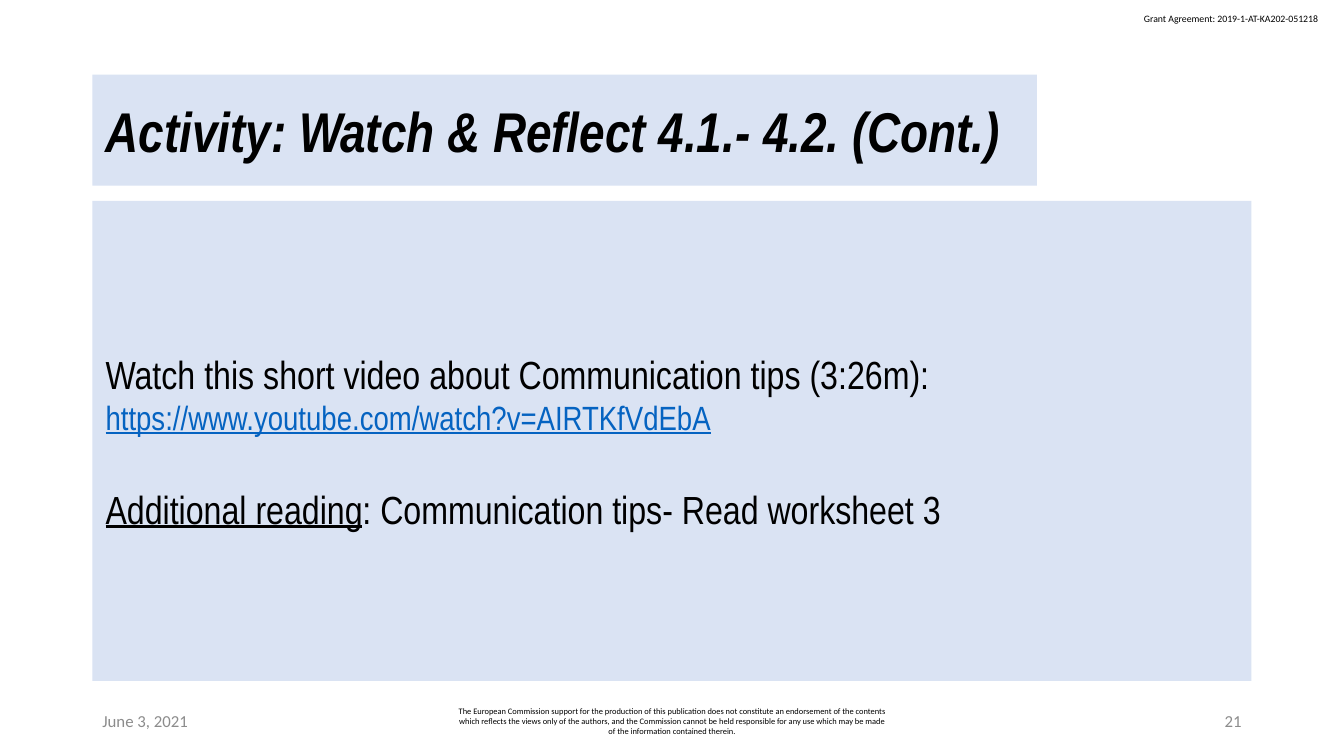
from dataclasses import dataclass, field

from pptx import Presentation
from pptx import util as u
from pptx.dml.color import RGBColor
from pptx.enum import shapes, text

BLACK, GREY, LINK_BLUE, PANEL_BLUE = "000000", "8C8C8C", "0563C1", "DAE3F3"
LEFT = 2.33
FOOTER_TOP, FOOTER_HEIGHT = 17.66, 1.01
ALIGN = text.PP_ALIGN


@dataclass
class Run:
    wording: str
    format: dict
    color: str = BLACK


@dataclass
class Line:
    runs: list[Run]
    layout: dict = field(default_factory=dict)


@dataclass
class Label:
    box: tuple[float, float, float, float]  # left, top, width, height in cm
    line: Line
    frame: dict


def rgb(value: str) -> RGBColor:
    return RGBColor.from_string(value)


def apply(target: object, values: dict) -> None:
    for name, value in values.items():
        setattr(target, name, value)


def cm(box: tuple) -> list:
    return [u.Cm(length) for length in box]


def write(frame: object, lines: list[Line], settings: dict) -> None:
    apply(frame, settings)
    for index, line in enumerate(lines):
        paragraph = frame.add_paragraph() if index else frame.paragraphs[0]
        apply(paragraph, {"alignment": ALIGN.LEFT} | line.layout)
        for part in line.runs:
            run = paragraph.add_run()
            run.text = part.wording
            apply(run.font, part.format)
            run.font.color.rgb = rgb(part.color)


def fill_panel(panel: object, lines: list[Line]) -> None:
    panel.fill.solid()
    panel.fill.fore_color.rgb = rgb(PANEL_BLUE)
    panel.line.fill.background()
    write(panel.text_frame, lines, PANEL_FRAME)


def add_label(slide: object, label: Label) -> None:
    box = slide.shapes.add_textbox(*cm(label.box))
    write(box.text_frame, [label.line], label.frame)


def font(name: str, size: float, **extra: bool) -> dict:
    return {"name": name, "size": u.Pt(size)} | extra


MIDDLE = {
    "word_wrap": True,
    "auto_size": text.MSO_AUTO_SIZE.NONE,
    "vertical_anchor": text.MSO_ANCHOR.MIDDLE,
}
PANEL_FRAME = MIDDLE | {
    "margin_left": u.Cm(0.33), "margin_right": u.Cm(0.33),
    "margin_top": u.Cm(0.18), "margin_bottom": u.Cm(0.18),
}
GRANT_FRAME = {"word_wrap": False, "auto_size": text.MSO_AUTO_SIZE.SHAPE_TO_FIT_TEXT}

FOOTER_FONT = font("Calibri", 12)
BODY_FONT = font("Arial Narrow", 28)

TITLE = Line([Run("Activity: Watch & Reflect 4.1.- 4.2. (Cont.)",
                  font("Arial Narrow", 40, bold=True, italic=True))])

TASKS = [
    Line([Run("Watch this short video about Communication tips (3:26m):", BODY_FONT)]),
    Line([Run("https://www.youtube.com/watch?v=AIRTKfVdEbA",
              font("Arial Narrow", 24, underline=True), LINK_BLUE)]),
    Line([Run("Additional reading", BODY_FONT | {"underline": True}),
          Run(": Communication tips- Read worksheet 3", BODY_FONT)],
         {"space_before": u.Pt(34)}),
]

DISCLAIMER = (
    "The European Commission support for the production of this publication does not "
    "constitute an endorsement of the contents which reflects the views only of the "
    "authors, and the Commission cannot be held responsible for any use which may be "
    "made of the information contained therein."
)

LABELS = [
    Label((28.58, 0.2, 5, 0.55),
          Line([Run("Grant Agreement: 2019-1-AT-KA202-051218", font("Calibri", 7))]),
          GRANT_FRAME),
    Label((LEFT, FOOTER_TOP, 7.62, FOOTER_HEIGHT),
          Line([Run("June 3, 2021", FOOTER_FONT, GREY)]), MIDDLE),
    Label((11.22, FOOTER_TOP, 11.43, FOOTER_HEIGHT),
          Line([Run(DISCLAIMER, font("Calibri", 6))], {"alignment": ALIGN.CENTER}), MIDDLE),
    Label((23.92, FOOTER_TOP, 7.62, FOOTER_HEIGHT),
          Line([Run("21", FOOTER_FONT, GREY)], {"alignment": ALIGN.RIGHT}), MIDDLE),
]


def main() -> None:
    deck = Presentation()
    deck.slide_width, deck.slide_height = u.Cm(33.87), u.Cm(19.05)
    slide = deck.slides.add_slide(deck.slide_layouts[5])

    # Grant number and footer
    for label in LABELS:
        add_label(slide, label)

    # Title
    title = slide.shapes.title
    title.left, title.top, title.width, title.height = cm((LEFT, 1.88, 23.8, 2.8))
    fill_panel(title, [TITLE])

    # Activity panel
    activity = slide.shapes.add_shape(shapes.MSO_SHAPE.RECTANGLE,
                                      *cm((LEFT, 5.06, 29.21, 12.1)))
    activity.shadow.inherit = False
    fill_panel(activity, TASKS)

    deck.save("out.pptx")


if __name__ == "__main__":
    main()
